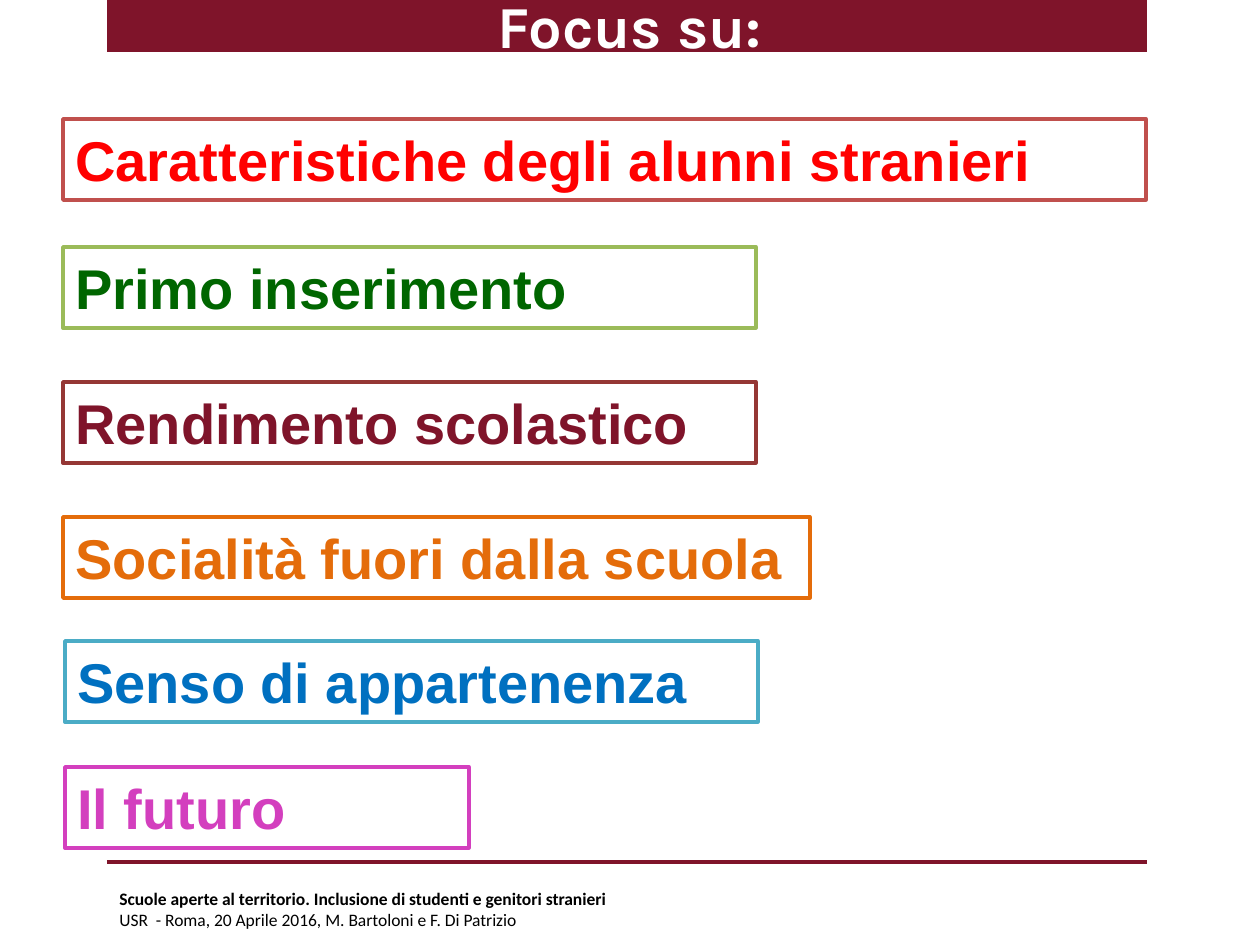
"""Build the slide listing the focus topics on foreign pupils."""
from dataclasses import dataclass

from lxml.etree import SubElement
from pptx import Presentation
from pptx.dml.color import RGBColor as RGB
from pptx.enum.shapes import MSO_CONNECTOR as CONN, MSO_SHAPE as SHAPE
from pptx.enum.text import MSO_ANCHOR as ANCHOR, PP_ALIGN as ALIGN
from pptx.oxml.ns import qn
from pptx.util import Pt

TITLE = "Focus su:"
TOPICS = [
    ("Caratteristiche degli alunni stranieri", 63, 119, 1083, "C0504D", "FF0000"),
    ("Primo inserimento", 63, 247, 693, "9BBB59", "006600"),
    ("Rendimento scolastico", 63, 382, 693, "953735", "7F142A"),
    ("Socialità fuori dalla scuola", 63, 517, 747, "E46C0A", "E46C0A"),
    ("Senso di appartenenza", 65, 641, 693, "4BACC6", "0070C0"),
    ("Il futuro", 65, 767, 404, "D33FBE", "D33FBE"),
]
FOOTER = [
    ("Scuole aperte al territorio. Inclusione di studenti e genitori stranieri", True),
    ("USR  - Roma, 20 Aprile 2016, M. Bartoloni e F. Di Patrizio", False),
]
PX = 914400 // 126
LEFT, WIDE, TALL = 107, 1040, 81


@dataclass(frozen=True)
class Theme:
    brand: str = "7F142A"
    white: str = "FFFFFF"
    black: str = "000000"
    title: int = 34
    topic: int = 32
    foot: int = 10
    line: int = 2


def px(*nums):
    return [n * PX for n in nums]


def write(shape, lines, *, font, size, color, align=ALIGN.LEFT, anchor=ANCHOR.TOP):
    frame = shape.text_frame
    frame.word_wrap = True
    frame.vertical_anchor = anchor
    para = frame.paragraphs[0]
    para.alignment = align
    for i, (text, bold) in enumerate(lines):
        if i:
            para.add_line_break()
        run = para.add_run()
        run.text = text
        run.font.name, run.font.size, run.font.bold = font, Pt(size), bold
        run.font.color.rgb = RGB.from_string(color)


def add_box(shapes, place, fill, edge=None):
    box = shapes.add_shape(SHAPE.RECTANGLE, *px(*place))
    box.shadow.inherit = False
    box.fill.solid()
    box.fill.fore_color.rgb = RGB.from_string(fill)
    if edge:
        box.line.color.rgb = RGB.from_string(edge)
        box.line.width = Pt(Theme.line)
    else:
        box.line.fill.background()
    return box


def add_rule(shapes, y):
    rule = shapes.add_connector(CONN.STRAIGHT, *px(LEFT, y, LEFT + WIDE, y))
    rule.line.color.rgb = RGB.from_string(Theme.brand)
    rule.line.width = Pt(Theme.line)
    SubElement(rule.line._get_or_add_ln().getparent(), qn("a:effectLst"))


def main():
    deck = Presentation()
    deck.slide_width, deck.slide_height = px(1260, 945)
    shapes = deck.slides.add_slide(deck.slide_layouts[6]).shapes

    add_box(shapes, (LEFT, 0, WIDE, 52), Theme.brand)
    add_rule(shapes, 862)
    head = shapes.add_textbox(*px(0, -6, 1260, 62))
    write(head, [(TITLE, True)], font="Karla", size=Theme.title,
          color=Theme.white, align=ALIGN.CENTER, anchor=ANCHOR.MIDDLE)

    for text, x, y, wide, edge, color in TOPICS:
        box = add_box(shapes, (x, y, wide, TALL), Theme.white, edge)
        write(box, [(text, True)], font="Arial", size=Theme.topic, color=color)

    foot = shapes.add_textbox(*px(LEFT, 882, 1210, 55))
    write(foot, FOOTER, font="Calibri", size=Theme.foot, color=Theme.black)
    deck.save("out.pptx")


if __name__ == "__main__":
    main()
